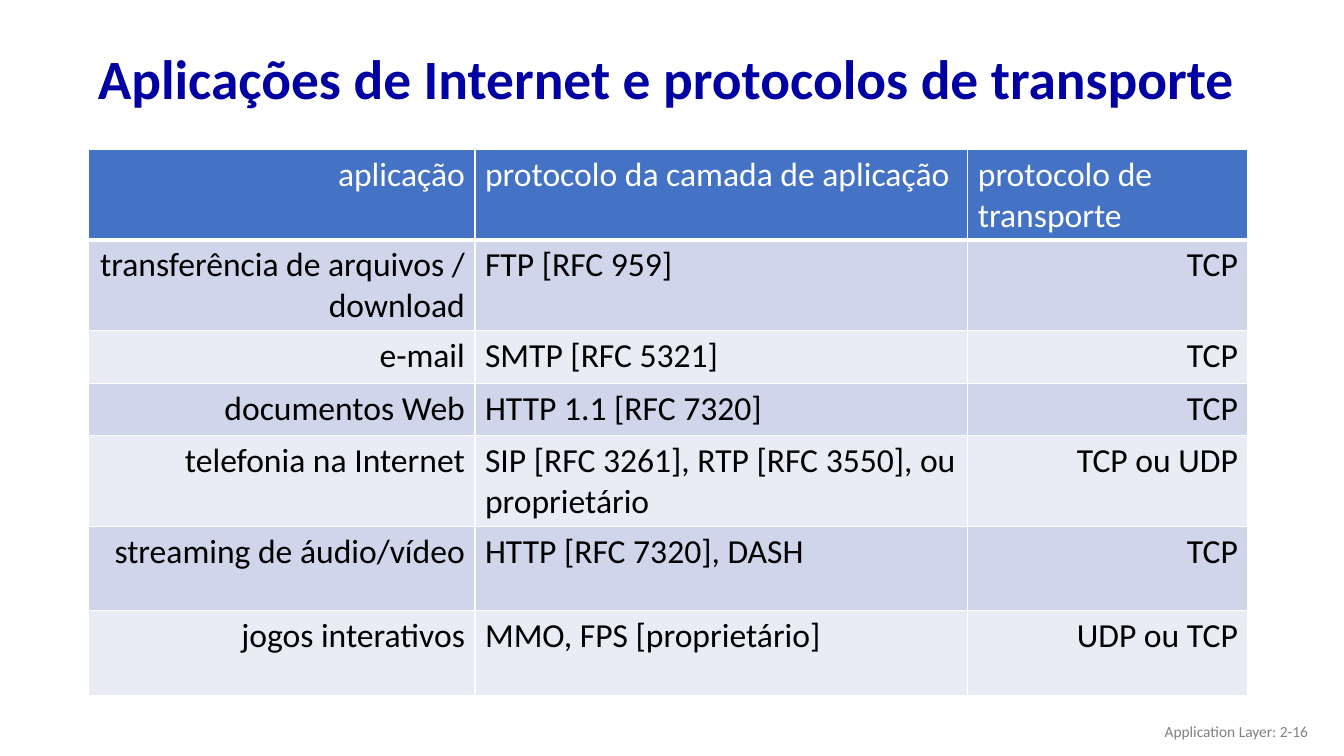
from lxml import etree
from pptx import Presentation
from pptx.dml.color import RGBColor
from pptx.enum.text import MSO_ANCHOR, MSO_AUTO_SIZE, PP_ALIGN
from pptx.oxml.ns import qn
from pptx.util import Cm, Pt

LEFT, RIGHT = PP_ALIGN.LEFT, PP_ALIGN.RIGHT
MIDDLE = MSO_ANCHOR.MIDDLE
NO_AUTOFIT = MSO_AUTO_SIZE.NONE

TITLE = "Aplicações de Internet e protocolos de transporte"
FOOTER = "Application Layer: 2-16"
COLUMN_WIDTHS = [9.73, 12.42, 7.06]
SHORT_ROW, TALL_ROW = 1.32, 2.13
ROWS = [
    (TALL_ROW, "aplicação", "protocolo da camada de aplicação", "protocolo de transporte"),
    (SHORT_ROW, "transferência de arquivos / download", "FTP [RFC 959]", "TCP"),
    (SHORT_ROW, "e-mail", "SMTP [RFC 5321]", "TCP"),
    (SHORT_ROW, "documentos Web", "HTTP 1.1 [RFC 7320]", "TCP"),
    (TALL_ROW, "telefonia na Internet", "SIP [RFC 3261], RTP [RFC 3550], ou proprietário", "TCP ou UDP"),
    (TALL_ROW, "streaming de áudio/vídeo", "HTTP [RFC 7320], DASH", "TCP"),
    (TALL_ROW, "jogos interativos", "MMO, FPS [proprietário]", "UDP ou TCP"),
]


def color(value):
    return RGBColor.from_string(value)


def write_text(frame, text, size, fill, bold=False, align=LEFT, spacing=None):
    paragraph = frame.paragraphs[0]
    paragraph.alignment = align
    paragraph.line_spacing = spacing
    run = paragraph.add_run()
    run.text = text
    run.font.name = "Calibri"
    run.font.size = Pt(size)
    run.font.bold = bold
    run.font.color.rgb = color(fill)


class SlideBuilder:
    title_color = "0000A3"
    footer_color = "808080"
    header_fill = "4472C4"
    band_fills = ["E9EBF5", "CFD5EA"]
    border_color = "FFFFFF"

    def __init__(self, slide):
        self.slide = slide

    def add_title(self, text, left, top, width, height):
        shape = self.slide.shapes.title
        shape.left, shape.top = Cm(left), Cm(top)
        shape.width, shape.height = Cm(width), Cm(height)
        frame = shape.text_frame
        frame.auto_size = NO_AUTOFIT
        frame.vertical_anchor = MIDDLE
        write_text(frame, text, 39.6, self.title_color, bold=True, spacing=0.9)

    def add_footer(self, text, left, top, width, height):
        shape = self.slide.shapes.add_textbox(Cm(left), Cm(top), Cm(width), Cm(height))
        frame = shape.text_frame
        frame.word_wrap = True
        frame.vertical_anchor = MIDDLE
        write_text(frame, text, 11, self.footer_color, align=RIGHT)

    def add_borders(self, cell, bottom_width):
        properties = cell._tc.get_or_add_tcPr()
        for side, width in zip("LRTB", (1, 1, 1, bottom_width)):
            line = etree.SubElement(properties, qn(f"a:ln{side}"), w=str(Pt(width)))
            fill = etree.SubElement(line, qn("a:solidFill"))
            etree.SubElement(fill, qn("a:srgbClr"), val=self.border_color)

    def add_table(self, rows, widths, left, top):
        heights = [row[0] for row in rows]
        table = self.slide.shapes.add_table(
            len(rows), len(widths), Cm(left), Cm(top), Cm(sum(widths)), Cm(sum(heights))
        ).table
        for column, width in zip(table.columns, widths):
            column.width = Cm(width)
        for row_index, (height, *texts) in enumerate(rows):
            table.rows[row_index].height = Cm(height)
            header = row_index == 0
            fill = self.header_fill if header else self.band_fills[row_index % 2]
            for column_index, text in enumerate(texts):
                cell = table.cell(row_index, column_index)
                self.add_borders(cell, 3 if header else 1)
                cell.fill.solid()
                cell.fill.fore_color.rgb = color(fill)
                right = column_index == 0 or (column_index == 2 and not header)
                write_text(cell.text_frame, text, 24, "FFFFFF" if header else "000000",
                           align=RIGHT if right else LEFT)


def main():
    presentation = Presentation()
    presentation.slide_width, presentation.slide_height = Cm(33.87), Cm(19.05)
    builder = SlideBuilder(presentation.slides.add_slide(presentation.slide_layouts[5]))
    builder.add_title(TITLE, 2.21, 0.81, 29.21, 2.49)
    builder.add_footer(FOOTER, 25.6, 17.91, 7.62, 1.02)
    builder.add_table(ROWS, COLUMN_WIDTHS, 2.24, 3.76)
    presentation.save("out.pptx")


if __name__ == "__main__":
    main()
